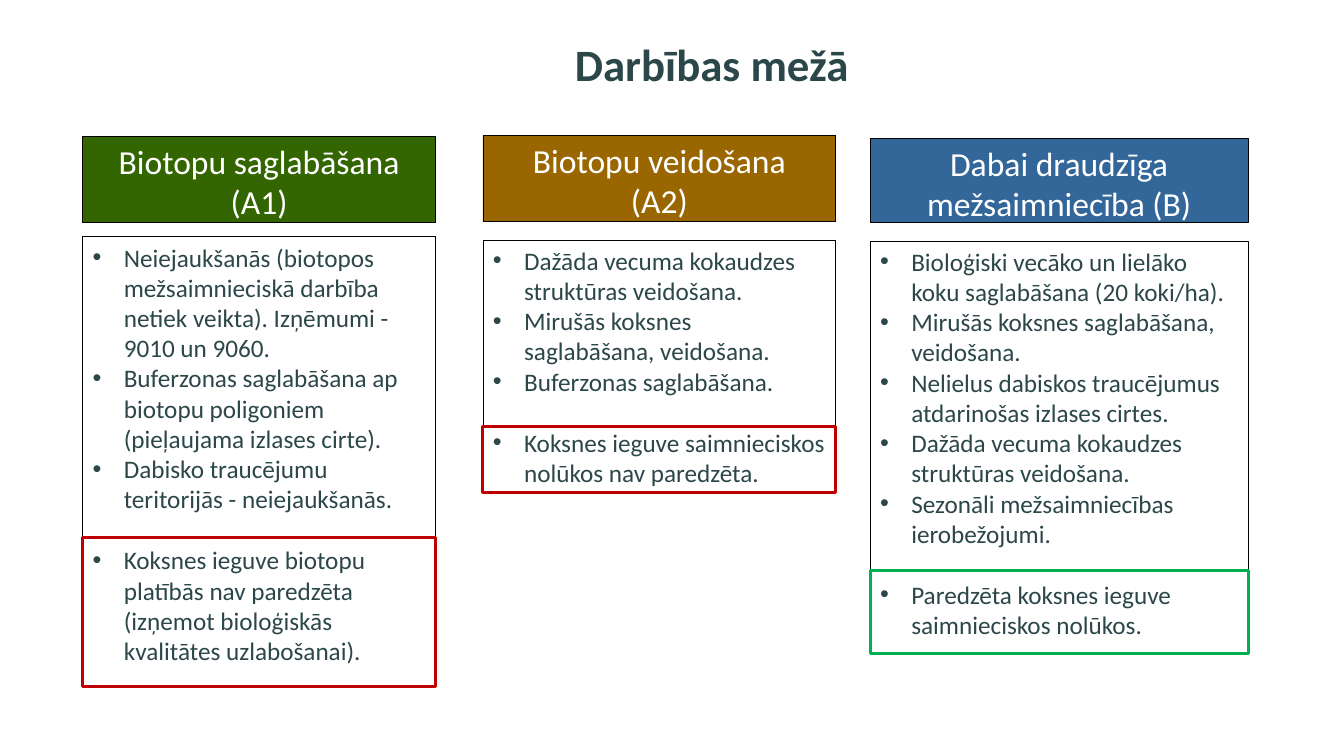
"""Build the slide on forest actions with three columns."""
import pptx
import pptx.dml.color
import pptx.enum.shapes
import pptx.enum.text
import pptx.oxml.xmlchemy
import pptx.util
import lxml.etree

Inches = pptx.util.Inches
Pt = pptx.util.Pt
Align = pptx.enum.text.PP_ALIGN

COLORS = {
    "text": "2C4749", "white": "FFFFFF", "black": "000000",
    "preserve": "336600", "create": "996600", "manage": "336699",
    "forbidden": "C00000", "allowed": "00B050",
}
INDENT = 0.31
BLANK_LINE = 22

COLUMNS = [
    {
        "left": 0.82, "width": 3.5, "color": "preserve", "mark": "forbidden",
        "header_rows": (1.35, 2.21), "body_rows": (2.35, 5.33, 6.81),
        "header": ["Biotopu saglabāšana (A1)"],
        "actions": [
            "Neiejaukšanās (biotopos mežsaimnieciskā darbība netiek veikta). "
            "Izņēmumi - 9010 un 9060.",
            "Buferzonas saglabāšana ap biotopu poligoniem (pieļaujama izlases cirte).",
            "Dabisko traucējumu teritorijās - neiejaukšanās.",
        ],
        "harvest": "Koksnes ieguve biotopu platībās nav paredzēta "
                   "(izņemot bioloģiskās kvalitātes uzlabošanai).",
    },
    {
        "left": 4.79, "width": 3.5, "color": "create", "mark": "forbidden",
        "header_rows": (1.34, 2.2), "body_rows": (2.38, 4.23, 4.89),
        "header": ["Biotopu veidošana", "(A2)"],
        "actions": [
            "Dažāda vecuma kokaudzes struktūras veidošana.",
            "Mirušās koksnes saglabāšana, veidošana.",
            "Buferzonas saglabāšana.",
        ],
        "harvest": "Koksnes ieguve saimnieciskos nolūkos nav paredzēta.",
    },
    {
        "left": 8.63, "width": 3.75, "color": "manage", "mark": "allowed",
        "header_rows": (1.37, 2.21), "body_rows": (2.39, 5.66, 6.48),
        "header": ["Dabai draudzīga mežsaimniecība (B)"],
        "actions": [
            "Bioloģiski vecāko un lielāko koku saglabāšana (20 koki/ha).",
            "Mirušās koksnes saglabāšana, veidošana.",
            "Nelielus dabiskos traucējumus atdarinošas izlases cirtes.",
            "Dažāda vecuma kokaudzes struktūras veidošana.",
            "Sezonāli mežsaimniecības ierobežojumi.",
        ],
        "harvest": "Paredzēta koksnes ieguve saimnieciskos nolūkos.",
    },
]


def rgb(name):
    """Return the named colour."""
    return pptx.dml.color.RGBColor.from_string(COLORS[name])


def add_bullet(paragraph):
    """Give a paragraph a hanging round bullet."""
    properties = paragraph._p.get_or_add_pPr()
    properties.set("marL", str(Inches(INDENT)))
    properties.set("indent", str(-Inches(INDENT)))
    font = lxml.etree.SubElement(properties, pptx.oxml.ns.qn("a:buFont"))
    font.set("typeface", "Arial")
    bullet = lxml.etree.SubElement(properties, pptx.oxml.ns.qn("a:buChar"))
    bullet.set("char", "•")


def write_text(paragraph, text, size=18, color="text", bold=False,
               align=Align.LEFT, bulleted=False, space_before=0):
    """Write formatted text into a paragraph."""
    if bulleted:
        add_bullet(paragraph)
    paragraph.text = text
    paragraph.alignment = align
    paragraph.space_before = Pt(space_before)
    paragraph.font.name = "Calibri"
    paragraph.font.size = Pt(size)
    paragraph.font.bold = bold
    paragraph.font.color.rgb = rgb(color)


def add_box(slide, column, rows, line, weight=0.5, fill=None):
    """Add a rectangle that spans a column between two rows."""
    top, bottom = rows
    box = slide.shapes.add_shape(
        pptx.enum.shapes.MSO_SHAPE.RECTANGLE, Inches(column["left"]),
        Inches(top), Inches(column["width"]), Inches(bottom - top))
    box.shadow.inherit = False
    box.line.color.rgb = rgb(line)
    box.line.width = Pt(weight)
    if fill:
        box.fill.solid()
        box.fill.fore_color.rgb = rgb(fill)
    else:
        box.fill.background()
    box.text_frame.word_wrap = True
    box.text_frame.vertical_anchor = pptx.enum.text.MSO_ANCHOR.TOP
    return box


def next_paragraph(frame, index):
    """Return the first paragraph of a frame, or a new one."""
    return frame.add_paragraph() if index else frame.paragraphs[0]


def add_column(slide, column):
    """Add a header, a list of actions and a marked harvest rule."""
    header = add_box(slide, column, column["header_rows"], "black",
                     fill=column["color"])
    for index, text in enumerate(column["header"]):
        write_text(next_paragraph(header.text_frame, index), text, size=24,
                   color="white", align=Align.CENTER)

    top, mark_top, bottom = column["body_rows"]
    body = add_box(slide, column, (top, bottom), "black", fill="white")
    for index, text in enumerate(column["actions"]):
        write_text(next_paragraph(body.text_frame, index), text, bulleted=True)
    write_text(body.text_frame.add_paragraph(), column["harvest"],
               bulleted=True, space_before=BLANK_LINE)
    add_box(slide, column, (mark_top, bottom), column["mark"], weight=2.25)


def add_title(slide, text):
    """Place and format the title."""
    title = slide.shapes.title
    title.left, title.top = Inches(4.79), Inches(0.31)
    title.width, title.height = Inches(4.54), Inches(0.64)
    title.text_frame.auto_size = pptx.enum.text.MSO_AUTO_SIZE.NONE
    title.text_frame.vertical_anchor = pptx.enum.text.MSO_ANCHOR.TOP
    write_text(title.text_frame.paragraphs[0], text, size=32, bold=True,
               align=Align.CENTER)


def main():
    """Build and save the presentation."""
    presentation = pptx.Presentation()
    presentation.slide_width = Inches(13.33)
    presentation.slide_height = Inches(7.5)
    slide = presentation.slides.add_slide(presentation.slide_layouts[5])
    add_title(slide, "Darbības mežā")
    for column in COLUMNS:
        add_column(slide, column)
    presentation.save("out.pptx")


if __name__ == "__main__":
    main()
